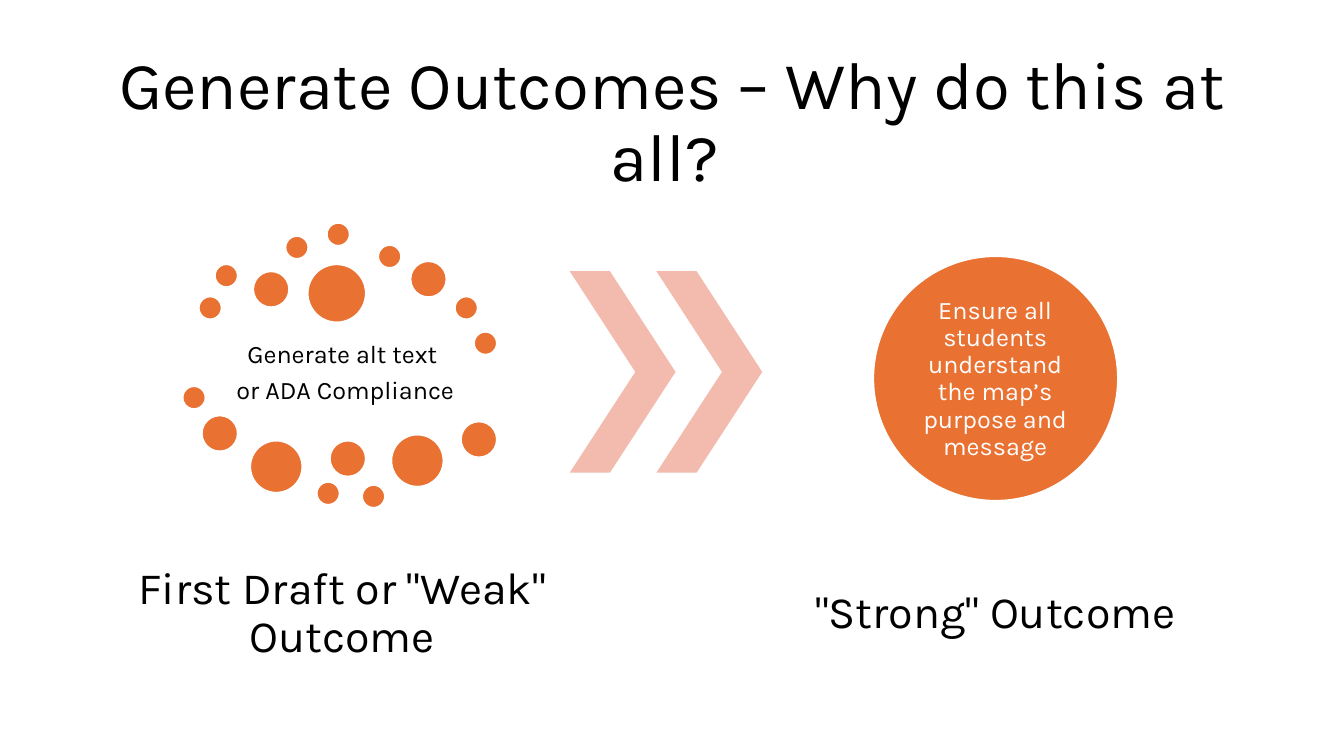
from pptx import Presentation
from pptx.dml.color import RGBColor
from pptx.enum.shapes import MSO_SHAPE
from pptx.enum.text import MSO_ANCHOR, PP_ALIGN
from pptx.util import Emu, Pt

PX = 9144
OVAL, CHEVRON = MSO_SHAPE.OVAL, MSO_SHAPE.CHEVRON
MIDDLE, CENTER = MSO_ANCHOR.MIDDLE, PP_ALIGN.CENTER
FONT = "Karla"
COLORS = {"text": "000000", "light": "FFFFFF", "dot": "E97132", "arrow": "F2BBAE"}
SMALL, MEDIUM, LARGE, LARGEST = 23, 36, 52, 58
DOTS = {
    SMALL: [(197, 294), (213, 262), (283, 234), (324, 221), (375, 243), (451, 294),
            (470, 329), (181, 383), (314, 478), (359, 481)],
    MEDIUM: [(251, 269), (407, 259), (200, 412), (327, 437), (457, 418)],
    LARGE: [(248, 437), (388, 431)],
    LARGEST: [(305, 262)],
}


def px(n):
    """Convert whole px to EMU."""
    return Emu(n * PX)


def color(name):
    """Look up a named colour."""
    return RGBColor.from_string(COLORS[name])


def add_text(s, lines, x, y, w, h, size, fill="text", inset=(4, 4), after=0.35):
    """Add a centred text box with one paragraph per line."""
    tf = s.shapes.add_textbox(px(x), px(y), px(w), px(h)).text_frame
    tf.word_wrap = True
    tf.vertical_anchor = MIDDLE
    tf.margin_left = tf.margin_right = px(inset[0])
    tf.margin_top = tf.margin_bottom = px(inset[1])
    tf.text = "\n".join(lines)
    for p in tf.paragraphs:
        p.alignment = CENTER
        p.line_spacing = 0.9
        p.space_after = Pt(size * after)
        p.font.name = FONT
        p.font.size = Pt(size)
        p.font.color.rgb = color(fill)


def add_filled(s, kind, x, y, w, h, fill):
    """Add a flat shape without outline."""
    sp = s.shapes.add_shape(kind, px(x), px(y), px(w), px(h))
    sp.shadow.inherit = False
    sp.fill.solid()
    sp.fill.fore_color.rgb = color(fill)
    sp.line.fill.background()
    return sp


def add_circle(s, x, y, d):
    """Add an orange circle with a white outline."""
    sp = add_filled(s, OVAL, x, y, d, d, "dot")
    sp.line.color.rgb = color("light")
    sp.line.width = Pt(1.5)


def add_chevron(s, x):
    """Add one chevron of the arrow."""
    sp = add_filled(s, CHEVRON, x, 269, 105, 200, "arrow")
    sp.adjustments[0] = 0.62


def main():
    """Build the slide and save it."""
    prs = Presentation()
    prs.slide_width, prs.slide_height = px(1333), px(750)
    s = prs.slides.add_slide(prs.slide_layouts[6])

    add_text(s, ["Generate Outcomes – Why do this at all? "],
             92, 61, 1150, 124, 48, inset=(10, 5), after=0)
    add_text(s, ["Generate alt text", " or ADA Compliance"],
             197, 323, 285, 94, 18, inset=(3, 3))
    add_text(s, ['First Draft or "Weak" Outcome'], 114, 521, 451, 176, 32)

    for d, places in DOTS.items():
        for x, y in places:
            add_circle(s, x, y, d)
    for x in (565, 651):
        add_chevron(s, x)

    add_circle(s, 866, 254, 243)
    add_text(s, ["Ensure all students understand the map’s purpose and message"],
             901, 290, 172, 172, 18, fill="light", inset=(0, 0))
    add_text(s, ['"Strong" Outcome'], 756, 521, 463, 176, 32)

    prs.save("out.pptx")


if __name__ == "__main__":
    main()
